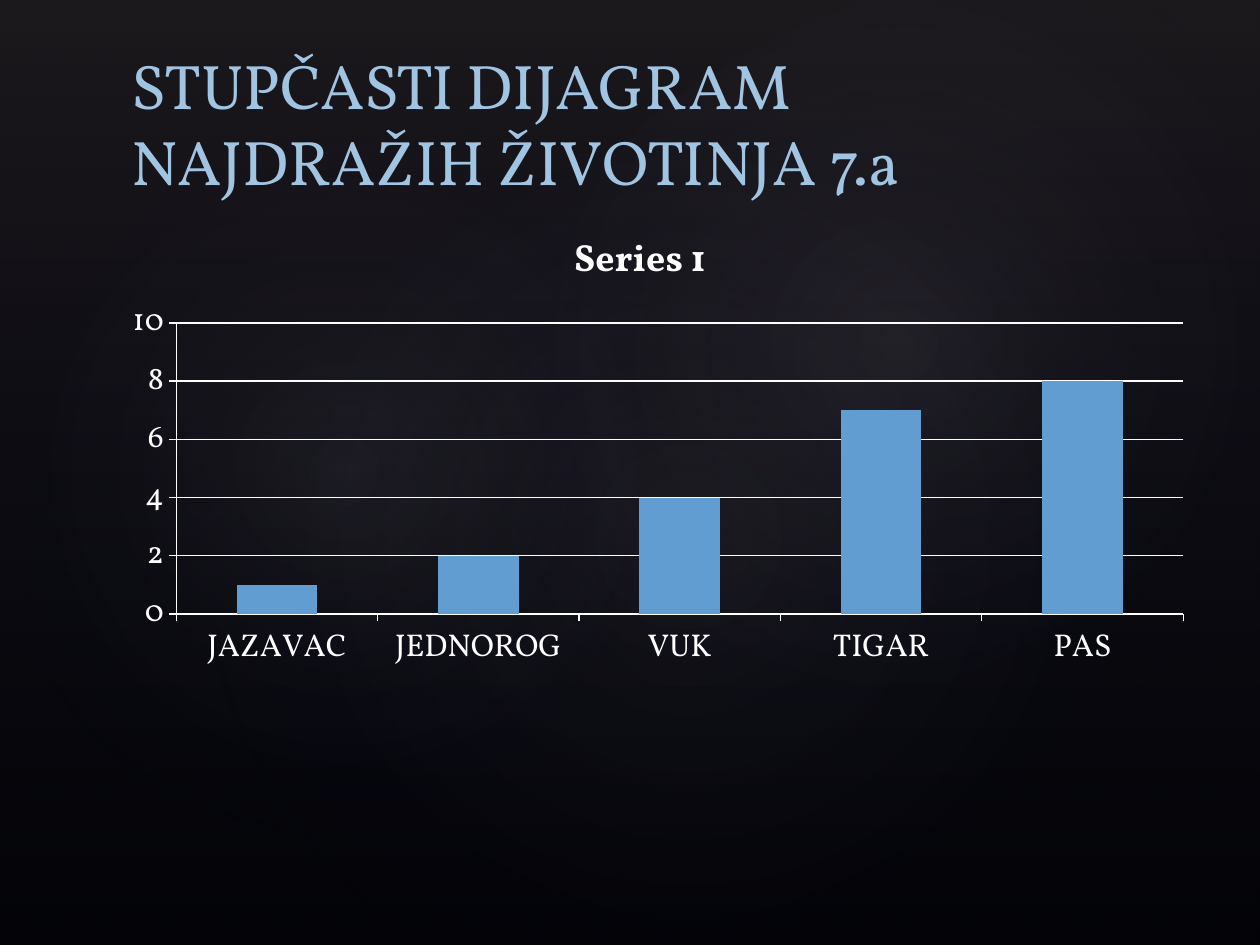
from lxml import etree
from pptx import Presentation
from pptx.chart.data import CategoryChartData
from pptx.dml.color import RGBColor
from pptx.enum.chart import XL_CHART_TYPE, XL_TICK_MARK
from pptx.enum.shapes import MSO_SHAPE
from pptx.enum.text import MSO_ANCHOR
from pptx.oxml import parse_xml
from pptx.oxml.ns import nsdecls, qn
from pptx.util import Cm, Pt

COLUMNS = XL_CHART_TYPE.COLUMN_CLUSTERED
TICK_OUTSIDE = XL_TICK_MARK.OUTSIDE
RECTANGLE, ELLIPSE = MSO_SHAPE.RECTANGLE, MSO_SHAPE.OVAL
BOTTOM = MSO_ANCHOR.BOTTOM

BLACK = RGBColor(0x00, 0x00, 0x00)
WHITE = RGBColor(0xFF, 0xFF, 0xFF)
BROWN = RGBColor(0x50, 0x46, 0x52)
NAVY = RGBColor(0x24, 0x28, 0x52)
MIST = RGBColor(0xC4, 0xBC, 0xC6)
PALE_BLUE = RGBColor(0xA1, 0xC4, 0xE3)
BAR_BLUE = RGBColor(0x62, 0x9D, 0xD1)
FONT = "Vollkorn"

LINEAR_DOWN = '<a:lin ang="5400000" scaled="0"/>'
RADIAL = ('<a:path path="circle"><a:fillToRect l="50000" t="50000" '
          'r="50000" b="50000"/></a:path>')

GLOWS = [
    ((3.81, 2.9, 20.12, 15.85), 328.7, 7),
    ((-0.76, 3.25, 15.39, 12.45), 294.3, 8),
    ((9.09, 0.33, 18.01, 13.21), 328.7, 8),
]
VOTES = {"JAZAVAC": 1, "JEDNOROG": 2, "VUK": 4, "TIGAR": 7, "PAS": 8}


def add_gradient_shape(slide, preset, box, stops, direction, rotation=0):
    shape = slide.shapes.add_shape(preset, *map(Cm, box))
    shape.rotation = rotation
    shape.shadow.inherit = False
    shape.line.fill.background()
    stop_xml = "".join(
        f'<a:gs pos="{position * 1000}"><a:srgbClr val="{color}">'
        f'<a:alpha val="{opacity * 1000}"/></a:srgbClr></a:gs>'
        for position, color, opacity in stops)
    gradient = parse_xml(
        f'<a:gradFill {nsdecls("a")} rotWithShape="1">'
        f'<a:gsLst>{stop_xml}</a:gsLst>{direction}</a:gradFill>')
    shape.element.spPr.find(qn("a:prstGeom")).addnext(gradient)


def add_backdrop(slide, box):
    slide.background.fill.solid()
    slide.background.fill.fore_color.rgb = BLACK
    add_gradient_shape(slide, RECTANGLE, box,
                       [(0, BROWN, 36), (100, NAVY, 10)], LINEAR_DOWN)
    left, top = box[:2]
    for (x, y, width, height), rotation, opacity in GLOWS:
        add_gradient_shape(slide, ELLIPSE, (left + x, top + y, width, height),
                           [(0, MIST, opacity), (58, NAVY, 0)], RADIAL, rotation)


def set_plot_layout(chart, x, y, width, height):
    plot_area = chart.element.find(".//" + qn("c:plotArea"))
    for old_layout in plot_area.findall(qn("c:layout")):
        plot_area.remove(old_layout)
    layout = etree.Element(qn("c:layout"))
    manual = etree.SubElement(layout, qn("c:manualLayout"))
    settings = [("layoutTarget", "inner"), ("xMode", "edge"), ("yMode", "edge"),
                ("x", x), ("y", y), ("w", width), ("h", height)]
    for tag, value in settings:
        etree.SubElement(manual, qn(f"c:{tag}")).set("val", str(value))
    plot_area.insert(0, layout)


def add_animal_chart(slide, box):
    votes = CategoryChartData()
    votes.categories = VOTES.keys()
    votes.add_series("Series 1", VOTES.values())
    chart = slide.shapes.add_chart(COLUMNS, *map(Cm, box), votes).chart
    chart.font.name = FONT
    chart.font.size = Pt(18)
    chart.font.color.rgb = WHITE
    chart.has_legend = False

    chart.has_title = True
    title = chart.chart_title.text_frame.paragraphs[0].add_run()
    title.text = "Series 1"
    title.font.name = FONT
    title.font.size = Pt(21.6)
    title.font.bold = True
    title.font.color.rgb = WHITE
    chart.chart_title.include_in_layout = False

    for axis in (chart.category_axis, chart.value_axis):
        axis.major_tick_mark = TICK_OUTSIDE
        axis.format.line.color.rgb = WHITE
        axis.format.line.width = Pt(0.75)
    scale = chart.value_axis
    scale.minimum_scale, scale.maximum_scale, scale.major_unit = 0, 10, 2
    scale.major_gridlines.format.line.color.rgb = WHITE
    scale.major_gridlines.format.line.width = Pt(0.75)

    columns = chart.plots[0]
    columns.gap_width = 150
    columns.vary_by_categories = False
    columns.series[0].format.fill.solid()
    columns.series[0].format.fill.fore_color.rgb = BAR_BLUE
    set_plot_layout(chart, 0.09, 0.18, 0.89, 0.44)


def add_heading(slide, box):
    frame = slide.shapes.add_textbox(*map(Cm, box)).text_frame
    frame.word_wrap = True
    frame.vertical_anchor = BOTTOM
    heading = frame.paragraphs[0].add_run()
    heading.text = "STUPČASTI DIJAGRAM NAJDRAŽIH ŽIVOTINJA 7.a"
    heading.font.name = FONT
    heading.font.size = Pt(36)
    heading.font.color.rgb = PALE_BLUE


def main():
    deck = Presentation()
    deck.slide_width, deck.slide_height = Cm(25.4), Cm(19.05)
    slide = deck.slides.add_slide(deck.slide_layouts[6])
    add_backdrop(slide, (0, 0, 25.4, 19.05))
    add_animal_chart(slide, (1.5, 4.11, 22.81, 13.34))
    add_heading(slide, (2.41, 1.57, 20.96, 2.54))
    deck.save("out.pptx")


if __name__ == "__main__":
    main()
